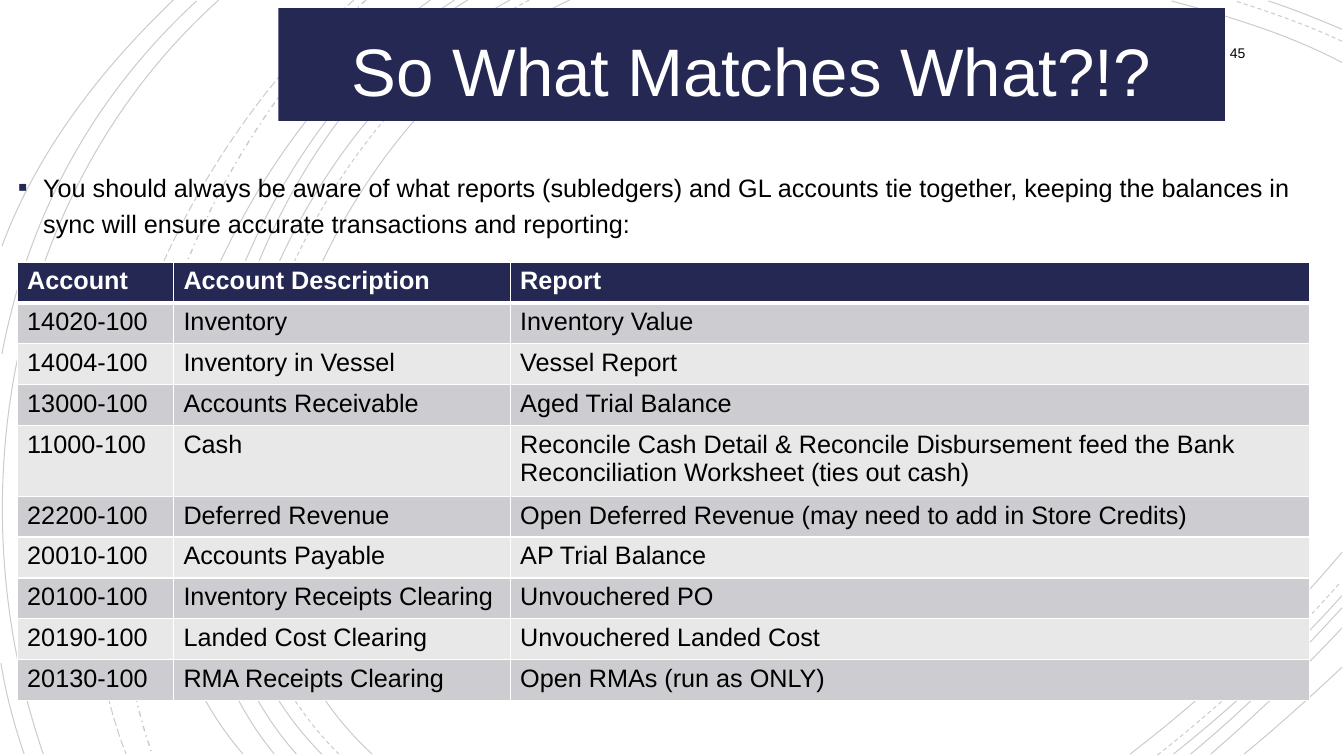
import pptx
import pptx.util
import pptx.oxml
import pptx.oxml.ns
import pptx.dml.color
import pptx.enum.dml
import pptx.enum.text

Inches = pptx.util.Inches
Pt = pptx.util.Pt
ALIGN = pptx.enum.text.PP_ALIGN
ANCHOR = pptx.enum.text.MSO_ANCHOR
DASH = pptx.enum.dml.MSO_LINE
NAVY, WHITE, BLACK = "242852", "FFFFFF", "000000"
BANDS = ["CDCDD1", "E8E8E9"]

ARCS = [
    (5.65, 0, 3.15, 1.15, 1.43, 5.4, 3.69, 7.48),
    (13.31, 0.62, 12.78, 0.34, 12.18, 0.16, 11.62, 0.01),
    (11.21, 7.48, 11.97, 6.9, 12.69, 6.22, 13.31, 5.48),
    (5.06, 0, 2.7, 1.27, 1.1, 5.37, 3.19, 7.48),
    (13.31, 0.29, 13.07, 0.19, 12.83, 0.09, 12.58, 0.01),
    (11.64, 7.48, 12.23, 7.01, 12.8, 6.48, 13.31, 5.91),
    (4.64, 0, 2.44, 1.33, 1.1, 5.41, 2.94, 7.48),
    (11.81, 7.48, 12.34, 7.04, 12.84, 6.55, 13.31, 6.03),
    (4.51, 0, 2.31, 1.38, 0.97, 5.33, 2.72, 7.48),
    (12.01, 7.48, 12.46, 7.09, 12.9, 6.67, 13.31, 6.23),
    (4.27, 0, 2.17, 1.47, 0.53, 5.29, 2.41, 7.48),
    (12.34, 7.48, 12.67, 7.21, 12.99, 6.92, 13.31, 6.62),
    (2.17, 0, 0.11, 1.85, -0.46, 4.9, 0.43, 7.48),
    (1.95, 0.01, 0.92, 0.96, 0.28, 2.14, 0.02, 3.51),
    (0.01, 6.58, 0.06, 6.89, 0.14, 7.19, 0.24, 7.48),
    (1.72, 0, 1, 0.69, 0.37, 1.5, 0.02, 2.44),
]
DASHED = [
    (5.25, 0, 2.85, 1.25, 1.23, 5.37, 3.36, 7.48),
    (13.31, 0.41, 12.97, 0.25, 12.6, 0.12, 12.25, 0.01),
    (11.48, 7.49, 12.13, 6.98, 12.75, 6.4, 13.3, 5.77),
]
DOTTED = (3.63, 0, 1.76, 1.66, 0.65, 5.09, 1.51, 7.48)
LONG = (3.51, 0, 1.57, 1.69, 0.29, 4.99, 1.25, 7.48)

ROWS = [
    ("Account", "Account Description", "Report"),
    ("14020-100", "Inventory", "Inventory Value"),
    ("14004-100", "Inventory in Vessel", "Vessel Report"),
    ("13000-100", "Accounts Receivable", "Aged Trial Balance"),
    ("11000-100", "Cash", "Reconcile Cash Detail & Reconcile Disbursement feed the Bank "
     "Reconciliation Worksheet (ties out cash)"),
    ("22200-100", "Deferred Revenue", "Open Deferred Revenue (may need to add in Store Credits)"),
    ("20010-100", "Accounts Payable", "AP Trial Balance"),
    ("20100-100", "Inventory Receipts Clearing", "Unvouchered PO"),
    ("20190-100", "Landed Cost Clearing", "Unvouchered Landed Cost"),
    ("20130-100", "RMA Receipts Clearing", "Open RMAs (run as ONLY)"),
]
TIE = ("You should always be aware of what reports (subledgers) and GL accounts tie together, "
       "keeping the balances in sync will ensure accurate transactions and reporting:")


def paint(target, color):
    target.solid()
    target.fore_color.rgb = pptx.dml.color.RGBColor.from_string(color)


def node(parent, tag, **attrs):
    item = parent.makeelement(pptx.oxml.ns.qn(tag), attrs)
    parent.append(item)
    return item


def write(frame, text, size, color, bold=False, align=ALIGN.LEFT):
    frame.text = text
    frame.word_wrap = True
    line = frame.paragraphs[0]
    line.alignment = align
    font = line.runs[0].font
    font.name, font.size, font.bold = "Arial", Pt(size), bold
    paint(font.fill, color)
    return line


def bend(arc):
    lines = list(arc._element.iter(pptx.oxml.ns.qn("a:lnTo")))
    outline = lines[0].getparent()
    outline.set("fill", "none")
    curve = node(outline, "a:cubicBezTo")
    for line in lines:
        curve.append(line[0])
        outline.remove(line)


def draw_arc(slide, curve, dash=DASH.SOLID, width=0.75):
    spots = [tuple(map(Inches, spot)) for spot in zip(curve[::2], curve[1::2])]
    pen = slide.shapes.build_freeform(*spots[0])
    pen.add_line_segments(spots[1:], close=False)
    arc = pen.convert_to_shape()
    bend(arc)
    arc.shadow.inherit = False
    arc.fill.background()
    paint(arc.line.fill, BLACK)
    arc.line.width = Pt(width)
    arc.line.dash_style = dash
    for tint in arc.line._ln.iter(pptx.oxml.ns.qn("a:srgbClr")):
        node(tint, "a:alpha", val="20000")


def add_head(slide):
    head = slide.shapes.title
    slide.shapes._spTree.append(head._element)
    head.left, head.top = Inches(2.76), Inches(0.08)
    head.width, head.height = Inches(9.39), Inches(1.12)
    paint(head.fill, NAVY)
    frame = head.text_frame
    line = write(frame, "So What Matches What?!?", 48, WHITE, align=ALIGN.CENTER)
    line.line_spacing = 1.2
    frame.auto_size = pptx.enum.text.MSO_AUTO_SIZE.NONE
    frame.vertical_anchor = ANCHOR.TOP


def add_text(slide, box, text, size, align=ALIGN.LEFT, anchor=ANCHOR.TOP):
    frame = slide.shapes.add_textbox(*map(Inches, box)).text_frame
    frame.vertical_anchor = anchor
    return write(frame, text, size, BLACK, align=align)


def add_bullet(line):
    props = line._p.get_or_add_pPr()
    props.set("marL", str(Inches(0.25)))
    props.set("indent", str(-Inches(0.25)))
    node(node(props, "a:buClr"), "a:srgbClr", val=NAVY)
    node(props, "a:buSzPct", val="110000")
    node(props, "a:buFont", typeface="Arial")
    node(props, "a:buChar", char="▪")
    line.line_spacing = 1.2


def add_edges(cell, row):
    props = cell._tc.get_or_add_tcPr()
    heavy = {0: "a:lnB", 1: "a:lnT"}.get(row)
    for side in ("a:lnL", "a:lnR", "a:lnT", "a:lnB"):
        edge = node(props, side, w=str(Pt(3 if side == heavy else 1)))
        node(node(edge, "a:solidFill"), "a:srgbClr", val=WHITE)


def add_grid(slide):
    box = map(Inches, (0.17, 2.6, 12.82, 3.65 / 9 * len(ROWS)))
    grid = slide.shapes.add_table(len(ROWS), 3, *box).table
    for col, width in zip(grid.columns, (1.55, 3.34, 7.93)):
        col.width = Inches(width)
    for r, texts in enumerate(ROWS):
        for c, text in enumerate(texts):
            cell = grid.cell(r, c)
            add_edges(cell, r)
            paint(cell.fill, BANDS[(r - 1) % 2] if r else NAVY)
            write(cell.text_frame, text, 18, BLACK if r else WHITE, bold=r == 0)


def main():
    deck = pptx.Presentation()
    deck.slide_width, deck.slide_height = Inches(13.33), Inches(7.5)
    slide = deck.slides.add_slide(deck.slide_layouts[5])
    paint(slide.background.fill, WHITE)
    for curve in ARCS:
        draw_arc(slide, curve)
    for curve in DASHED:
        draw_arc(slide, curve, DASH.DASH)
    draw_arc(slide, DOTTED, DASH.DASH_DOT, 1)
    draw_arc(slide, LONG, DASH.LONG_DASH)
    add_head(slide)
    add_text(slide, (11.45, 0.35, 1, 0.35), "45", 10, ALIGN.RIGHT, ANCHOR.MIDDLE)
    add_bullet(add_text(slide, (0.08, 1.6, 13.25, 5.56), TIE, 18))
    add_grid(slide)
    deck.save("out.pptx")


if __name__ == "__main__":
    main()
